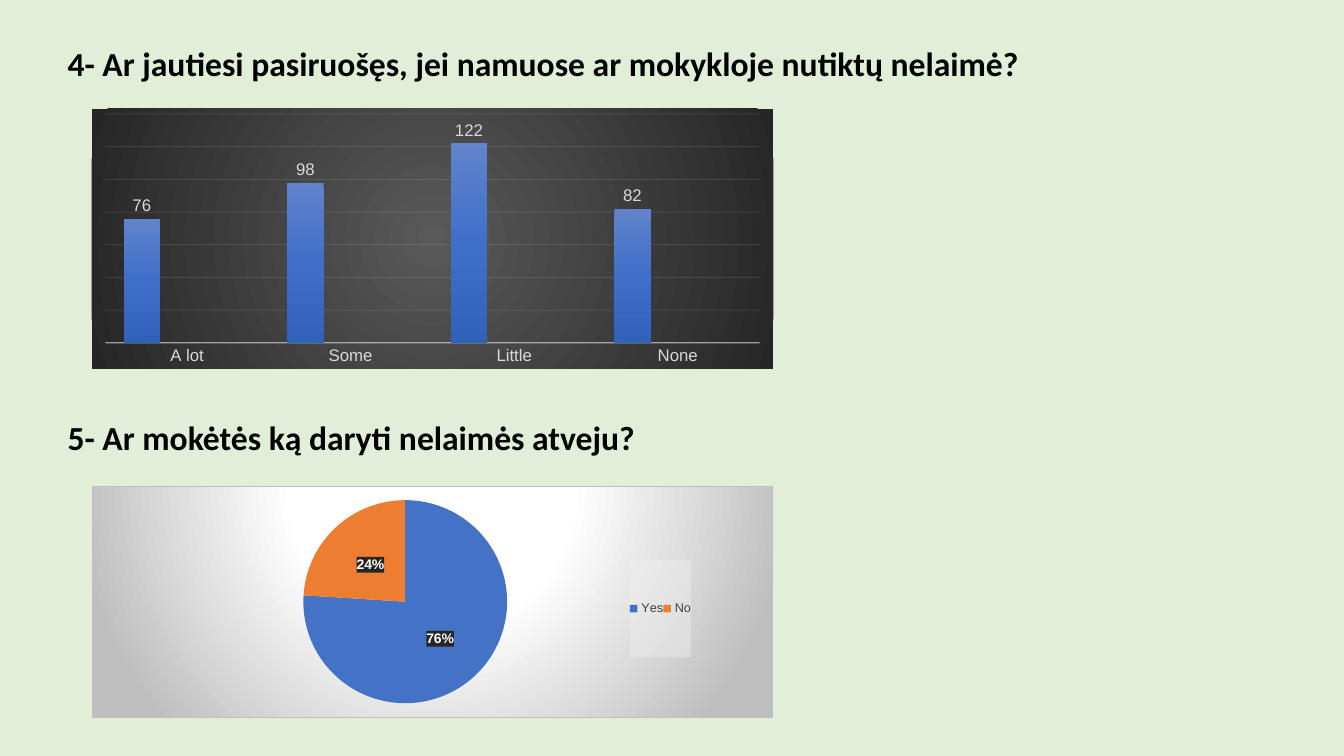
from pptx import Presentation
from pptx import util as u
from pptx.chart.data import CategoryChartData
from pptx.dml.color import RGBColor
from pptx.enum import chart as c, text as t
from pptx.oxml import parse_xml
from pptx.oxml.ns import nsdecls

PX = 9144  # 100 px to the inch
BACKGROUND = RGBColor(0xE1, 0xEF, 0xD8)
BLACK = RGBColor(0, 0, 0)
WHITE = RGBColor(0xFF, 0xFF, 0xFF)
PALE = RGBColor(0xF2, 0xF2, 0xF2)
LIGHT = RGBColor(0xD9, 0xD9, 0xD9)
SILVER = RGBColor(0xBF, 0xBF, 0xBF)
SLATE = RGBColor(0x59, 0x59, 0x59)
DARK = RGBColor(0x40, 0x40, 0x40)
CHARCOAL = RGBColor(0x26, 0x26, 0x26)
BLUE = RGBColor(0x44, 0x72, 0xC4)
ORANGE = RGBColor(0xED, 0x7D, 0x31)
BLUES = [(0, RGBColor(0x61, 0x83, 0xCB)), (50, RGBColor(0x3E, 0x70, 0xCA)),
         (100, RGBColor(0x30, 0x62, 0xBB))]
ORANGES = [(0, RGBColor(0xF1, 0x8C, 0x57)), (50, RGBColor(0xF6, 0x7B, 0x28)),
           (100, RGBColor(0xE5, 0x6C, 0x19))]
GRAYS = [(0, RGBColor(0xAF, 0xAF, 0xAF)), (50, RGBColor(0xA5, 0xA5, 0xA5)),
         (100, RGBColor(0x93, 0x93, 0x93))]
DOWNWARD = '<a:lin ang="5400000" scaled="0"/>'


def circle(left, top, right, bottom):
    return (f'<a:path path="circle"><a:fillToRect l="{left * 1000}" t="{top * 1000}" '
            f'r="{right * 1000}" b="{bottom * 1000}"/></a:path>')


def gradient(stops, direction):
    marks = "".join(f'<a:gs pos="{position * 1000}"><a:srgbClr val="{color}"/></a:gs>'
                    for position, color in stops)
    return f'<a:gradFill rotWithShape="1"><a:gsLst>{marks}</a:gsLst>{direction}</a:gradFill>'


def solid(color, opacity):
    return (f'<a:solidFill><a:srgbClr val="{color}"><a:alpha val="{opacity * 1000}"/>'
            '</a:srgbClr></a:solidFill>')


def shape_properties(fill, line="<a:ln><a:noFill/></a:ln>"):
    return parse_xml(f'<c:spPr {nsdecls("c", "a")}>{fill}{line}</c:spPr>')


def manual_layout(x, y, width, height, target=""):
    return parse_xml(
        f'<c:layout {nsdecls("c")}><c:manualLayout>{target}'
        '<c:xMode val="edge"/><c:yMode val="edge"/>'
        f'<c:x val="{x}"/><c:y val="{y}"/><c:w val="{width}"/><c:h val="{height}"/>'
        '</c:manualLayout></c:layout>')


def set_font(font, size, color, bold=False, name="Arial"):
    font.size, font.bold, font.name = u.Pt(size), bold, name
    font.color.rgb = color


def set_line(line, width, color):
    line.width = u.Pt(width)
    line.color.rgb = color


def set_opacity(color_element, percent):
    color_element.append(parse_xml(f'<a:alpha {nsdecls("a")} val="{percent * 1000}"/>'))


def place_question(placeholder, words, left, top, width, height):
    placeholder.left, placeholder.top = left * PX, top * PX
    placeholder.width, placeholder.height = width * PX, height * PX
    frame = placeholder.text_frame
    frame.text = words
    frame.vertical_anchor = t.MSO_ANCHOR.TOP
    paragraph = frame.paragraphs[0]
    paragraph.alignment = t.PP_ALIGN.LEFT
    paragraph.space_before = u.Pt(0)
    properties = paragraph._p.get_or_add_pPr()
    properties.set("marL", "0")
    properties.set("indent", "0")
    properties.append(parse_xml(f'<a:buNone {nsdecls("a")}/>'))
    set_font(paragraph.runs[0].font, 24, BLACK, True, "Calibri")


def add_chart(slide, kind, categories, series, box, plot_box, background):
    data = CategoryChartData()
    data.categories = categories
    for name, values in series:
        data.add_series(name, values)
    chart = slide.shapes.add_chart(kind, *(n * PX for n in box), data).chart
    chart.has_title = chart.has_legend = False
    set_font(chart.font, 10, BLACK)
    chart.element.find("{*}chart").addnext(background)
    plot_area = chart.element.xpath("c:chart/c:plotArea")[0]
    for layout in plot_area.xpath("c:layout"):
        plot_area.remove(layout)
    plot_area.insert(0, manual_layout(*plot_box, '<c:layoutTarget val="inner"/>'))
    return chart


def style_columns(chart, captions):
    plot = chart.plots[0]
    plot.gap_width, plot.overlap, plot.vary_by_categories = 100, -24, False

    # Axes
    category_axis, value_axis = chart.category_axis, chart.value_axis
    category_axis.major_tick_mark = c.XL_TICK_MARK.NONE
    set_font(category_axis.tick_labels.font, 12, LIGHT)
    set_line(category_axis.format.line, 1, PALE)
    set_opacity(category_axis._element.xpath("c:spPr//a:srgbClr")[0], 54)
    value_axis.visible = False
    value_axis.minimum_scale, value_axis.maximum_scale = 0, 70
    value_axis.major_unit = 10
    set_line(value_axis.major_gridlines.format.line, 0.75, PALE)
    set_opacity(value_axis._element.xpath("c:majorGridlines//a:srgbClr")[0], 10)

    # Bars and their labels
    for series, stops in zip(plot.series, (BLUES, ORANGES, GRAYS)):
        series._element.get_or_add_spPr().append(
            parse_xml(gradient(stops, DOWNWARD).replace(
                "<a:gradFill", f'<a:gradFill {nsdecls("a")}', 1)))
        labels = series.data_labels
        labels.show_value = True
        labels.position = c.XL_LABEL_POSITION.OUTSIDE_END
        set_font(labels.font, 12, LIGHT)
    for index, caption in enumerate(captions):
        label = plot.series[0].points[index].data_label
        label.text_frame.text = caption
        set_font(label.text_frame.paragraphs[0].runs[0].font, 12, LIGHT)
        label.position = c.XL_LABEL_POSITION.OUTSIDE_END


def style_pie(chart):
    plot = chart.plots[0]
    plot.vary_by_categories = True
    for index, color in enumerate((BLUE, ORANGE)):
        fill = plot.series[0].points[index].format.fill
        fill.solid()
        fill.fore_color.rgb = color

    # Percent labels on dark plates
    labels = plot.series[0].data_labels
    labels.show_percentage, labels.show_value = True, False
    labels.number_format, labels.number_format_is_linked = "0%", False
    labels.position = c.XL_LABEL_POSITION.CENTER
    set_font(labels.font, 10, WHITE, True)
    labels._element.find("{*}txPr").addprevious(shape_properties(solid(CHARCOAL, 75)))

    # Legend
    chart.has_legend = True
    legend = chart.legend
    legend.position = c.XL_LEGEND_POSITION.RIGHT
    legend.include_in_layout = False
    set_font(legend.font, 9, DARK)
    for layout in legend._element.xpath("c:layout"):
        legend._element.remove(layout)
    legend._element.find("{*}legendPos").addnext(manual_layout(0.79, 0.32, 0.09, 0.42))
    legend._element.find("{*}txPr").addprevious(shape_properties(solid(PALE, 39)))


def main():
    presentation = Presentation()
    presentation.slide_width, presentation.slide_height = 1333 * PX, 750 * PX
    slide = presentation.slides.add_slide(presentation.slide_layouts[1])
    slide.background.fill.solid()
    slide.background.fill.fore_color.rgb = BACKGROUND

    # Questions
    place_question(slide.shapes.title,
                   "4- Ar jautiesi pasiruošęs, jei namuose ar mokykloje nutiktų nelaimė?",
                   57, 38, 1226, 50)
    place_question(slide.placeholders[1], "5- Ar mokėtės ką daryti nelaimės atveju?",
                   57, 409, 1199, 50)

    # Preparedness columns
    spotlight = gradient([(0, SLATE), (100, CHARCOAL)], circle(50, 50, 50, 50))
    columns = add_chart(
        slide, c.XL_CHART_TYPE.COLUMN_CLUSTERED, ["A lot", "Some", "Little", "None"],
        [("Series 1", (38, 49, 61, 41)), ("Series 2", [None] * 4), ("Series 3", [None] * 4)],
        (91, 108, 676, 258), (0.02, 0.02, 0.96, 0.88), shape_properties(spotlight))
    style_columns(columns, ["76", "98", "122", "82"])

    # Knowledge pie
    glow = gradient([(0, WHITE), (39, WHITE), (100, SILVER)], circle(50, -80, 50, 180))
    border = f'<a:ln w="9525">{solid(SILVER, 100)}</a:ln>'
    pie = add_chart(
        slide, c.XL_CHART_TYPE.PIE, ["Yes", "No"], [("Series 1", (76, 24))],
        (91, 482, 676, 230), (0.31, 0.06, 0.3, 0.88), shape_properties(glow, border))
    style_pie(pie)

    presentation.save("out.pptx")


if __name__ == "__main__":
    main()
